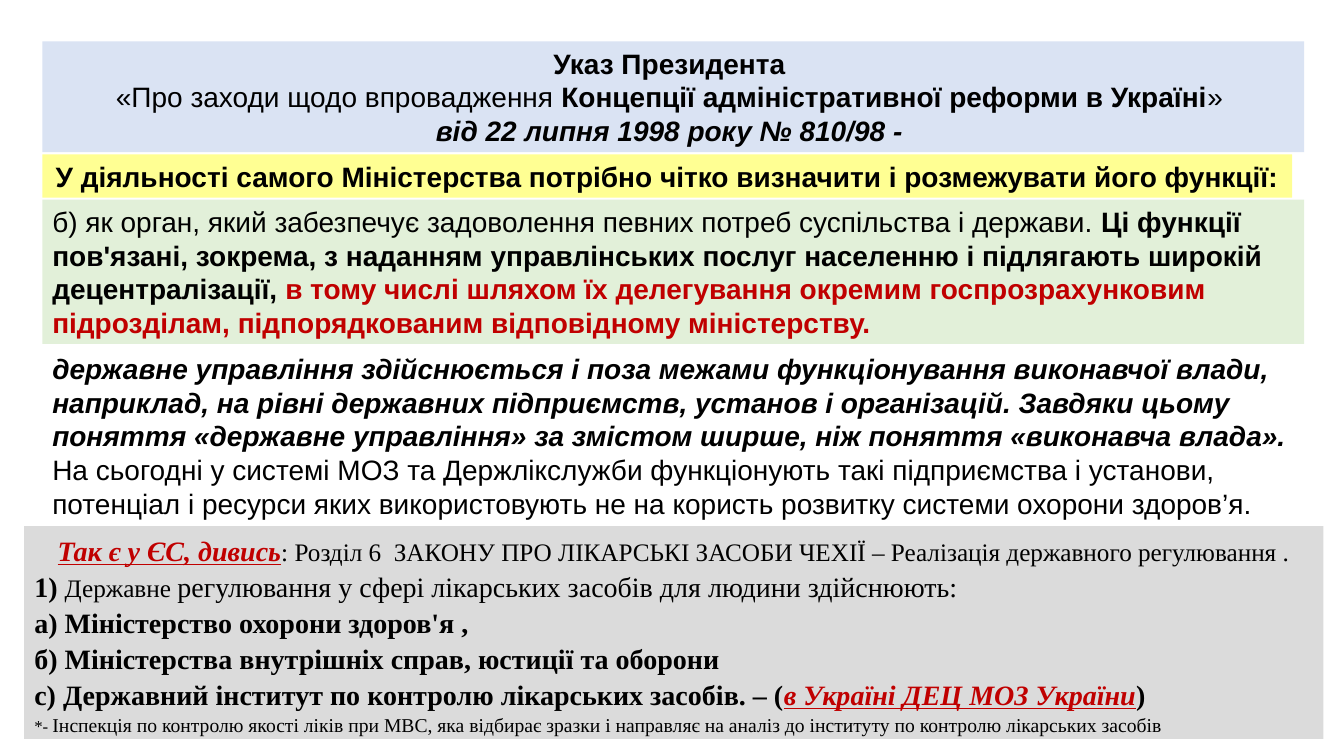
from dataclasses import dataclass
from typing import Optional

from pptx import Presentation
from pptx.dml.color import RGBColor
from pptx.enum.shapes import MSO_SHAPE
from pptx.enum.text import MSO_ANCHOR, MSO_AUTO_SIZE, PP_ALIGN
from pptx.oxml.xmlchemy import OxmlElement
from pptx.util import Pt

BLACK = RGBColor(0x00, 0x00, 0x00)
RED = RGBColor(0xC0, 0x00, 0x00)
BLUE = RGBColor(0xDA, 0xE3, 0xF3)
YELLOW = RGBColor(0xFF, 0xFF, 0x93)
GREEN = RGBColor(0xE2, 0xF0, 0xD9)
GREY = RGBColor(0xDB, 0xDB, 0xDB)
SANS = "Arial"
SERIF = "Times New Roman"


@dataclass
class Run:
    text: str
    size: float = 20
    bold: bool = False
    italic: bool = False
    underline: bool = False
    color: RGBColor = BLACK


@dataclass
class Para:
    runs: list[Run]
    align: PP_ALIGN = PP_ALIGN.LEFT


@dataclass
class Panel:
    kind: str
    left: float
    top: float
    width: float
    height: float
    paras: list[Para]
    fill: Optional[RGBColor] = None
    font: str = SANS
    anchor: MSO_ANCHOR = MSO_ANCHOR.TOP
    spacing: float = 1.0


def add_text(p, text: str, *, font: str, size: float, bold: bool, italic: bool,
             underline: bool, color: RGBColor) -> None:
    r = p.add_run()
    r.text = text
    r.font.name = font
    r.font.size = Pt(size)
    r.font.bold = bold
    r.font.italic = italic
    r.font.underline = underline
    r.font.color.rgb = color


def make_shape(s, panel: Panel):
    box = [Pt(v) for v in (panel.left, panel.top, panel.width, panel.height)]
    if panel.kind == "rect":
        sp = s.shapes.add_shape(MSO_SHAPE.RECTANGLE, *box)
        sp.shadow.inherit = False
    elif panel.kind == "text":
        sp = s.shapes.add_textbox(*box)
    else:
        sp = s.shapes.title if panel.kind == "title" else s.placeholders[1]
        sp.left, sp.top, sp.width, sp.height = box
    return sp


def draw_panel(s, panel: Panel) -> None:
    sp = make_shape(s, panel)
    if panel.fill is not None:
        sp.fill.solid()
        sp.fill.fore_color.rgb = panel.fill
        sp.line.fill.background()
    tf = sp.text_frame
    tf.word_wrap = True
    tf.auto_size = MSO_AUTO_SIZE.NONE
    tf.vertical_anchor = panel.anchor
    tf.margin_left = tf.margin_right = Pt(7.2)
    tf.margin_top = tf.margin_bottom = Pt(3.6)
    for i, para in enumerate(panel.paras):
        p = tf.add_paragraph() if i else tf.paragraphs[0]
        p.alignment = para.align
        p.line_spacing = panel.spacing
        p.space_before = Pt(0)
        if panel.kind == "body":
            pPr = p._p.get_or_add_pPr()
            pPr.set("marL", "0")
            pPr.set("indent", "0")
            pPr.append(OxmlElement("a:buNone"))
        for run in para.runs:
            add_text(p, run.text, font=panel.font, size=run.size, bold=run.bold,
                     italic=run.italic, underline=run.underline, color=run.color)


PANELS = [
    Panel("title", 30.24, 29.5, 901.4, 79.2, [
        Para([Run("Указ Президента ", bold=True)], PP_ALIGN.CENTER),
        Para([Run("«Про заходи щодо впровадження "),
              Run("Концепції адміністративної реформи в Україні", bold=True),
              Run("» ")], PP_ALIGN.CENTER),
        Para([Run("від 22 липня 1998 року № 810/98 - ", bold=True, italic=True)],
             PP_ALIGN.CENTER),
    ], BLUE),
    Panel("rect", 30.24, 110.2, 892.8, 31, [
        Para([Run("У діяльності самого Міністерства потрібно чітко визначити "
                  "і розмежувати його функції:", bold=True)], PP_ALIGN.CENTER),
    ], YELLOW, anchor=MSO_ANCHOR.MIDDLE),
    Panel("rect", 30.24, 142.6, 901.4, 103, [
        Para([Run("б) як орган, який забезпечує задоволення певних потреб "
                  "суспільства і держави. "),
              Run("Ці функції пов'язані, зокрема, з наданням управлінських послуг "
                  "населенню і підлягають широкій децентралізації, ", bold=True),
              Run("в тому числі шляхом їх делегування окремим госпрозрахунковим "
                  "підрозділам, підпорядкованим відповідному міністерству.",
                  bold=True, color=RED)]),
    ], GREEN),
    Panel("text", 30.24, 247.7, 901.4, 127.4, [
        Para([Run("державне управління здійснюється і поза межами функціонування "
                  "виконавчої влади, наприклад, на рівні державних підприємств, "
                  "установ і організацій. Завдяки цьому поняття «державне управління» "
                  "за змістом ширше, ніж поняття «виконавча влада».",
                  bold=True, italic=True),
              Run(" На сьогодні у системі МОЗ та Держлікслужби функціонують такі "
                  "підприємства і установи, потенціал і ресурси яких використовують "
                  "не на користь розвитку системи охорони здоров’я.")]),
    ]),
    Panel("body", 17.28, 375.8, 928, 152, [
        Para([Run("Так є у ЄС, дивись", bold=True, italic=True, underline=True,
                  color=RED),
              Run(": Розділ 6  ЗАКОНУ ПРО ЛІКАРСЬКІ ЗАСОБИ ЧЕХІЇ – Реалізація "
                  "державного регулювання .", 18)], PP_ALIGN.CENTER),
        Para([Run("1) ", bold=True), Run("Державне ", 18),
              Run("регулювання у сфері лікарських засобів для людини здійснюють:")]),
        Para([Run("а) Міністерство охорони здоров'я ,", bold=True)]),
        Para([Run("б) Міністерства внутрішніх справ, юстиції та оборони", bold=True)]),
        Para([Run("с) Державний інститут по контролю лікарських засобів. – (",
                  bold=True),
              Run("в Україні ДЕЦ МОЗ України", bold=True, italic=True,
                  underline=True, color=RED),
              Run(")", bold=True)]),
        Para([Run("*- ", 12),
              Run("Інспекція по контролю якості ліків при МВС, яка відбирає зразки "
                  "і направляє на аналіз до інституту по контролю лікарських засобів",
                  14)]),
    ], GREY, font=SERIF, spacing=1.07),
]


def main() -> None:
    prs = Presentation()
    prs.slide_width = Pt(960)
    prs.slide_height = Pt(540)
    s = prs.slides.add_slide(prs.slide_layouts[1])
    for panel in PANELS:
        draw_panel(s, panel)
    prs.save("out.pptx")


if __name__ == "__main__":
    main()
